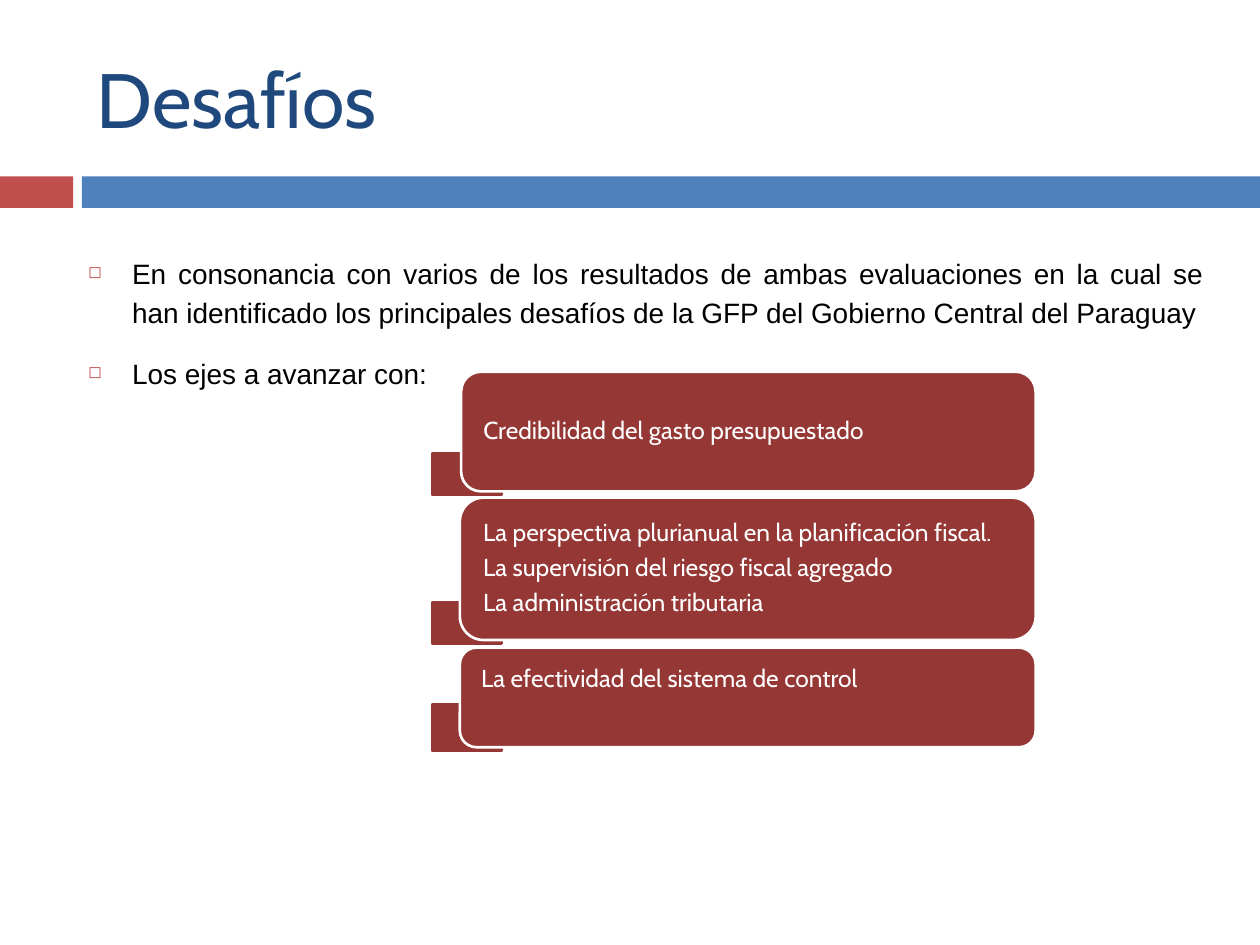
from lxml.etree import SubElement
from pptx import Presentation
from pptx.dml.color import RGBColor
from pptx.enum.shapes import MSO_SHAPE
from pptx.enum.text import MSO_ANCHOR, PP_ALIGN
from pptx.oxml.ns import qn
from pptx.util import Inches, Pt

COLORS = {"red": "C0504D", "blue": "4F81BD", "navy": "1F497D",
          "maroon": "953735", "white": "FFFFFF", "black": "000000"}
WIDTH, HEIGHT = 10, 7.5
TITLE = "Desafíos"
BULLETS = [
    "En consonancia con varios de los resultados de ambas evaluaciones en la cual se "
    "han identificado los principales desafíos de la GFP del Gobierno Central del Paraguay",
    "Los ejes a avanzar con:",
]
BAND = {"top": 1.4, "height": 0.25, "split": 0.58, "gap": 0.07}
AXES = [
    {"lines": ["Credibilidad del gasto presupuestado"],
     "left": 3.66, "top": 2.95, "height": 0.95, "tab": 0.33, "bottom_inset": 0},
    {"lines": ["La perspectiva plurianual en la planificación fiscal.",
               "La supervisión del riesgo fiscal agregado",
               "La administración tributaria"],
     "left": 3.65, "top": 3.95, "height": 1.13, "tab": 0.33, "bottom_inset": 0},
    {"lines": ["La efectividad del sistema de control"],
     "left": 3.65, "top": 5.14, "height": 0.79, "tab": 0.37, "bottom_inset": 0.29},
]
AXIS_RIGHT = 8.22
TAB = {"left": 3.43, "width": 0.55, "overhang": 0.03}

TITLE_FONT = {"size": Pt(44), "name": "Cabin"}
BODY_FONT = {"size": Pt(16), "name": "Arial"}
AXIS_FONT = {"size": Pt(14), "name": "Cabin"}
BODY_PARA = {"alignment": PP_ALIGN.JUSTIFY, "line_spacing": 1.15,
             "space_before": Pt(7), "space_after": Pt(6)}
AXIS_PARA = {"alignment": PP_ALIGN.LEFT, "line_spacing": 0.9, "space_after": Pt(5)}


def color(name):
    return RGBColor.from_string(COLORS[name])


def apply(target, values):
    for name, value in values.items():
        setattr(target, name, value)


def add_block(page, kind, area, fill, line=None):
    block = page.shapes.add_shape(kind, *map(Inches, area))
    block.shadow.inherit = False
    block.fill.solid()
    block.fill.fore_color.rgb = color(fill)
    if line:
        block.line.color.rgb = color(line)
        block.line.width = Pt(1.5)
    else:
        block.line.fill.background()
    return block


def write(shape, lines, font, font_color, para_format, frame_format):
    frame = shape.text_frame
    apply(frame, {"word_wrap": True, **frame_format})
    for index, line in enumerate(lines):
        para = frame.add_paragraph() if index else frame.paragraphs[0]
        apply(para, para_format)
        span = para.add_run()
        span.text = line
        apply(span.font, font)
        span.font.color.rgb = color(font_color)
    return frame.paragraphs


def add_bullet(para):
    properties = para._p.get_or_add_pPr()
    properties.set("marL", str(Inches(0.35)))
    properties.set("indent", str(-Inches(0.35)))
    tint = SubElement(properties, qn("a:buClr"))
    SubElement(tint, qn("a:srgbClr"), val=COLORS["red"])
    SubElement(properties, qn("a:buSzPct"), val="60000")
    SubElement(properties, qn("a:buChar"), char="◻")


def add_axis(page, axis):
    bottom = axis["top"] + axis["height"]
    tab_top = bottom + TAB["overhang"] - axis["tab"]
    add_block(page, MSO_SHAPE.RECTANGLE,
              (TAB["left"], tab_top, TAB["width"], axis["tab"]), "maroon", "maroon")
    box = add_block(page, MSO_SHAPE.ROUNDED_RECTANGLE,
                    (axis["left"], axis["top"], AXIS_RIGHT - axis["left"], axis["height"]),
                    "maroon", "white")
    write(box, axis["lines"], AXIS_FONT, "white", AXIS_PARA,
          {"vertical_anchor": MSO_ANCHOR.MIDDLE,
           "margin_left": Inches(0.13), "margin_right": Inches(0.13),
           "margin_top": 0, "margin_bottom": Inches(axis["bottom_inset"])})


def main():
    deck = Presentation()
    apply(deck, {"slide_width": Inches(WIDTH), "slide_height": Inches(HEIGHT)})
    page = deck.slides.add_slide(deck.slide_layouts[6])

    band_left = BAND["split"] + BAND["gap"]
    for left, width, fill in [(0, BAND["split"], "red"),
                              (band_left, WIDTH - band_left, "blue")]:
        add_block(page, MSO_SHAPE.RECTANGLE,
                  (left, BAND["top"], width, BAND["height"]), fill)

    title = page.shapes.add_textbox(*map(Inches, (0.67, 0.3, 8.83, 0.95)))
    write(title, [TITLE], TITLE_FONT, "navy", {}, {"vertical_anchor": MSO_ANCHOR.MIDDLE})

    body = page.shapes.add_textbox(*map(Inches, (0.6, 1.95, 9.05, 5.27)))
    for para in write(body, BULLETS, BODY_FONT, "black", BODY_PARA, {}):
        add_bullet(para)

    for axis in AXES:
        add_axis(page, axis)
    deck.save("out.pptx")


if __name__ == "__main__":
    main()
